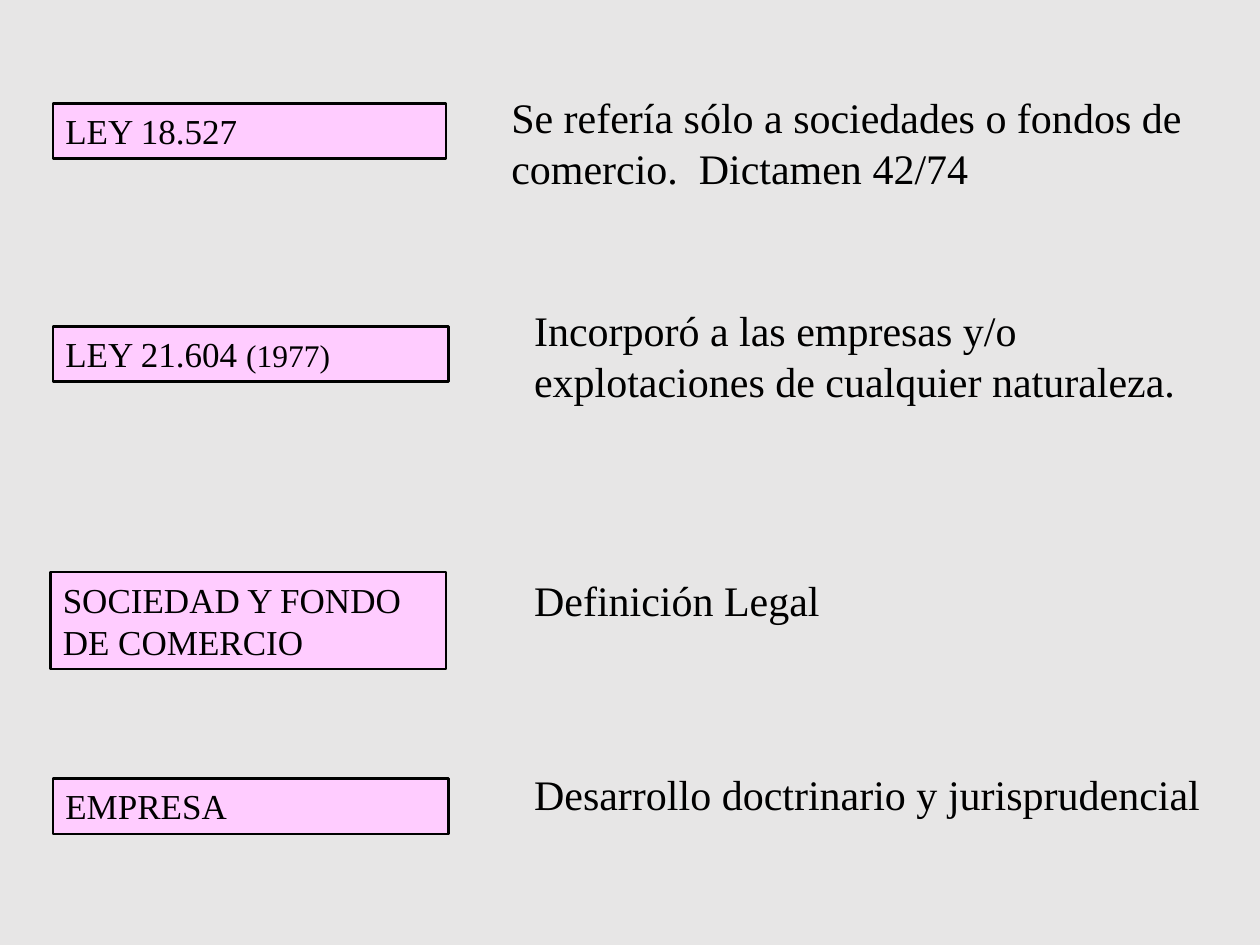
from dataclasses import dataclass

from lxml.etree import SubElement
from pptx import Presentation
from pptx.dml.color import RGBColor
from pptx.enum.shapes import MSO_SHAPE as Shape
from pptx.enum.text import MSO_ANCHOR as Anchor, MSO_AUTO_SIZE as AutoSize, PP_ALIGN as Align
from pptx.oxml.ns import qn
from pptx.util import Inches, Pt


@dataclass(frozen=True)
class Theme:
    background: RGBColor = RGBColor(0xE7, 0xE6, 0xE6)
    label_fill: RGBColor = RGBColor(0xFF, 0xCC, 0xFF)
    ink: RGBColor = RGBColor(0, 0, 0)
    font: str = "Times New Roman"
    label_size: int = 20
    year_size: int = 18
    comment_size: int = 24
    border: float = 1.5


THEME = Theme()
LABEL_LEFT, LABEL_WIDTH = 0.42, 3.14
COMMENT_LEFT = 4.14
ONE_LABEL_LINE, TWO_LABEL_LINES = 0.44, 0.77
ONE_COMMENT_LINE, TWO_COMMENT_LINES = 0.5, 0.91


def write(shape, *parts, size, space_before=50):
    """Fill a shape with one paragraph; a part is text or a (text, size) pair."""
    frame = shape.text_frame
    frame.word_wrap = True
    frame.auto_size = AutoSize.SHAPE_TO_FIT_TEXT
    frame.vertical_anchor = Anchor.TOP
    paragraph = frame.paragraphs[0]
    paragraph.alignment = Align.LEFT
    spacing = SubElement(paragraph._p.get_or_add_pPr(), qn("a:spcBef"))
    SubElement(spacing, qn("a:spcPct")).set("val", str(space_before * 1000))
    for part in parts:
        text, part_size = (part, size) if isinstance(part, str) else part
        run = paragraph.add_run()
        run.text = text
        run.font.name = THEME.font
        run.font.size = Pt(part_size)
        run.font.color.rgb = THEME.ink


def add_label(slide, *parts, top, left=LABEL_LEFT, width=LABEL_WIDTH, height=ONE_LABEL_LINE):
    label = slide.shapes.add_shape(
        Shape.RECTANGLE, Inches(left), Inches(top), Inches(width), Inches(height))
    label.shadow.inherit = False
    label.fill.solid()
    label.fill.fore_color.rgb = THEME.label_fill
    label.line.color.rgb = THEME.ink
    label.line.width = Pt(THEME.border)
    write(label, *parts, size=THEME.label_size)


def add_comment(slide, text, top, width, left=COMMENT_LEFT, height=ONE_COMMENT_LINE):
    comment = slide.shapes.add_textbox(
        Inches(left), Inches(top), Inches(width), Inches(height))
    write(comment, text, size=THEME.comment_size)


def main():
    deck = Presentation()
    deck.slide_width, deck.slide_height = Inches(10), Inches(7.5)
    slide = deck.slides.add_slide(deck.slide_layouts[6])
    slide.background.fill.solid()
    slide.background.fill.fore_color.rgb = THEME.background

    add_comment(slide, "Se refería sólo a sociedades o fondos de comercio.  Dictamen 42/74",
                left=3.96, top=0.68, width=5.87, height=TWO_COMMENT_LINES)
    add_label(slide, "LEY 18.527", top=0.82, width=3.12)
    add_label(slide, "LEY 21.604 ", ("(1977)", THEME.year_size), top=2.59)
    add_label(slide, "SOCIEDAD Y FONDO DE COMERCIO",
              left=0.4, top=4.54, height=TWO_LABEL_LINES)
    add_label(slide, "EMPRESA", top=6.18)
    add_comment(slide, "Incorporó a las empresas y/o explotaciones de cualquier naturaleza.",
                top=2.37, width=5.69, height=TWO_COMMENT_LINES)
    add_comment(slide, "Definición Legal", top=4.51, width=4.92)
    add_comment(slide, "Desarrollo doctrinario y jurisprudencial", top=6.05, width=5.61)

    deck.save("out.pptx")


if __name__ == "__main__":
    main()
